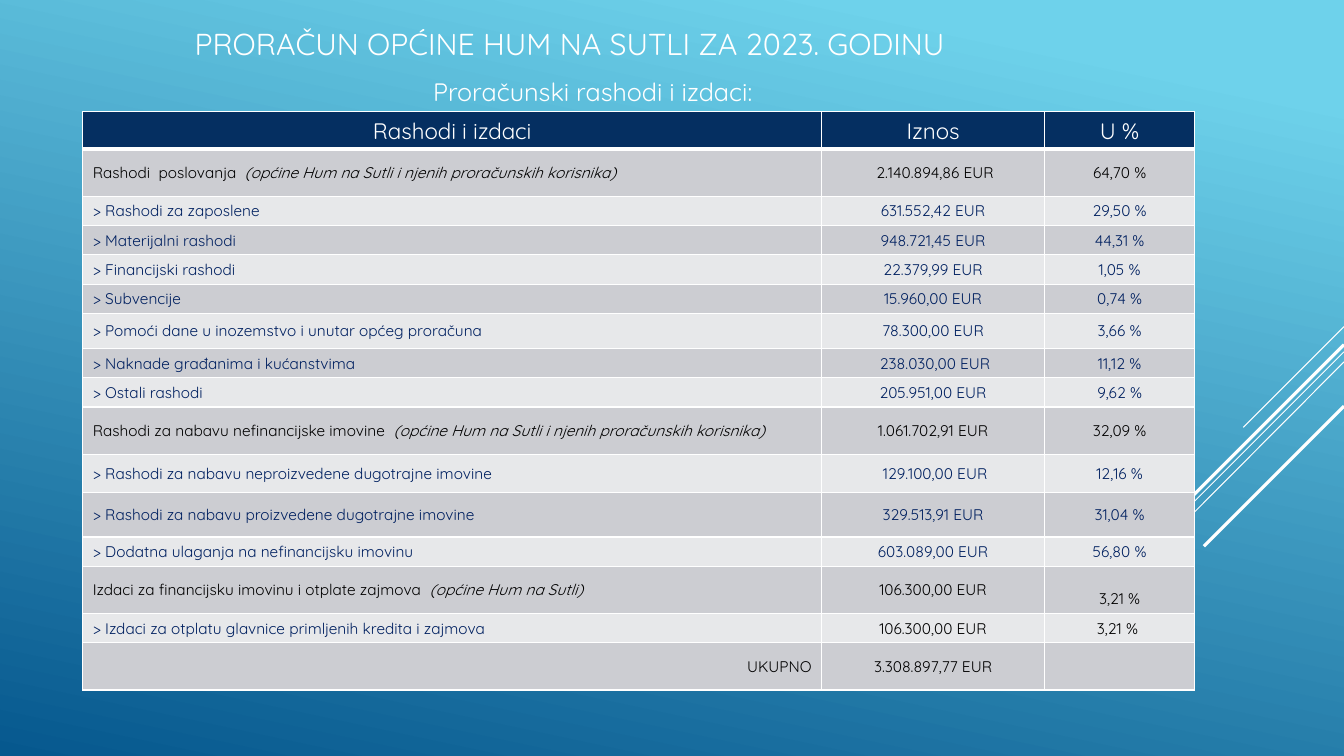
from dataclasses import dataclass

from lxml import etree
from pptx import Presentation
from pptx.dml.color import RGBColor
from pptx.enum.shapes import MSO_CONNECTOR
from pptx.enum.text import MSO_ANCHOR, PP_ALIGN
from pptx.oxml.ns import qn
from pptx.util import Inches, Pt

LEFT, MID, RIGHT = PP_ALIGN.LEFT, PP_ALIGN.CENTER, PP_ALIGN.RIGHT
CENTER, BASE = MSO_ANCHOR.MIDDLE, MSO_ANCHOR.BOTTOM
STRAIGHT = MSO_CONNECTOR.STRAIGHT


@dataclass(frozen=True)
class Theme:
    font: str = "Quicksand"
    white: str = "FFFFFF"
    black: str = "000000"
    navy: str = "002060"
    head: str = "052F61"
    dark: str = "CCCDD2"
    light: str = "E7E8EA"
    sky: str = "6ED2EB"
    deep: str = "06588E"
    title: float = 21.6
    sub: float = 18
    top: float = 16
    body: float = 11


THEME = Theme()

# Start x, start y, end x, end y, width in points
RAYS = [
    (13.33, 3.24, 12.33, 4.24, 0.75),
    (13.33, 3.49, 10.07, 6.75, 0.75),
    (13.33, 3.59, 11.26, 5.67, 0.75),
    (13.33, 3.42, 11.42, 5.33, 2.25),
    (13.33, 4.03, 11.94, 5.42, 2.25),
]

COLS = [7.33, 2.21, 1.49]
HEADS = ["Rashodi i izdaci", "Iznos", "U %"]
ALL = "(općine Hum na Sutli i njenih proračunskih korisnika)"

# Row height, label, italic note, amount, share
ROWS = [
    (0.47, "Rashodi  poslovanja  ", ALL, " 2.140.894,86 EUR", "64,70 %"),
    (0.29, "> Rashodi za zaposlene", "", "631.552,42 EUR", "29,50 %"),
    (0.29, "> Materijalni rashodi", "", "948.721,45 EUR", "44,31 %"),
    (0.29, "> Financijski rashodi", "", "22.379,99 EUR", "1,05 %"),
    (0.29, "> Subvencije", "", "15.960,00 EUR", "0,74 %"),
    (0.35, "> Pomoći dane u inozemstvo i unutar općeg proračuna", "",
     "78.300,00 EUR", "3,66 %"),
    (0.29, "> Naknade građanima i kućanstvima", "", " 238.030,00 EUR", "11,12 %"),
    (0.29, "> Ostali rashodi", "", "205.951,00 EUR", "9,62 %"),
    (0.47, "Rashodi za nabavu nefinancijske imovine  ", ALL,
     "1.061.702,91 EUR", "32,09 %"),
    (0.38, "> Rashodi za nabavu neproizvedene dugotrajne imovine", "",
     " 129.100,00 EUR", "12,16 %"),
    (0.44, "> Rashodi za nabavu proizvedene dugotrajne imovine", "",
     "329.513,91 EUR", "31,04 %"),
    (0.29, "> Dodatna ulaganja na nefinancijsku imovinu", "",
     "603.089,00 EUR", "56,80 %"),
    (0.47, "Izdaci za financijsku imovinu i otplate zajmova  ",
     "(općine Hum na Sutli) ", "106.300,00 EUR", "3,21 %"),
    (0.29, "> Izdaci za otplatu glavnice primljenih kredita i zajmova", "",
     "106.300,00 EUR", "3,21 % "),
    (0.47, "UKUPNO", "", "3.308.897,77 EUR", ""),
]
LOAN = 13  # first row of the loan part, whose figures are all black


def rgb(code):
    return RGBColor.from_string(code)


def write(frame, text, note="", size=THEME.body, color=THEME.black,
          align=LEFT, anchor=CENTER):
    """Write one paragraph, with an optional italic note at its end."""
    frame.word_wrap = True
    frame.vertical_anchor = anchor
    para = frame.paragraphs[0]
    para.alignment = align
    for part, slant in ((text, False), (note, True)):
        if part:
            run = para.add_run()
            run.text = part
            font = run.font
            font.name, font.size = THEME.font, Pt(size)
            font.bold, font.italic = False, slant
            font.color.rgb = rgb(color)


def add_text(slide, box, text, **style):
    shape = slide.shapes.add_textbox(*map(Inches, box))
    write(shape.text_frame, text, **style)


def add_ray(slide, x1, y1, x2, y2, width):
    ray = slide.shapes.add_connector(STRAIGHT, *map(Inches, (x1, y1, x2, y2)))
    ray.line.color.rgb = rgb(THEME.white)
    ray.line.width = Pt(width)
    etree.SubElement(ray._element.spPr, qn("a:effectLst"))


def edge(cell, tag, width):
    line = etree.SubElement(cell._tc.get_or_add_tcPr(), qn("a:" + tag),
                            w=str(Pt(width)))
    fill = etree.SubElement(line, qn("a:solidFill"))
    etree.SubElement(fill, qn("a:srgbClr"), val=THEME.white)


def paint(cell, fill, base=1):
    """Set the borders, then the fill, of a cell."""
    for tag, width in (("lnL", 1), ("lnR", 1), ("lnT", 1), ("lnB", base)):
        edge(cell, tag, width)
    cell.fill.solid()
    cell.fill.fore_color.rgb = rgb(fill)


def fill_row(table, i, label, note, amount, share):
    ink = THEME.navy if label.startswith(">") else THEME.black
    sums = THEME.black if i >= LOAN else ink
    side = RIGHT if i == len(ROWS) else LEFT
    drop = BASE if i == LOAN else CENTER
    cells = [table.cell(i, j) for j in range(len(COLS))]
    for cell in cells:
        paint(cell, THEME.dark if i % 2 else THEME.light)
        # The row under the header shares its heavy line
        if i == 1:
            cell._tc.tcPr.find(qn("a:lnT")).set("w", str(Pt(3)))
    write(cells[0].text_frame, label, note=note, color=ink, align=side)
    write(cells[1].text_frame, amount, color=sums, align=MID)
    write(cells[2].text_frame, share, color=sums, align=MID)
    for cell, anchor in zip(cells, (CENTER, CENTER, drop)):
        cell.vertical_anchor = anchor


def add_costs(slide):
    highs = [0.37] + [row[0] for row in ROWS]
    box = (0.82, 1.11, sum(COLS), sum(highs))
    table = slide.shapes.add_table(len(highs), len(COLS),
                                   *map(Inches, box)).table
    for col, width in zip(table.columns, COLS):
        col.width = Inches(width)
    for row, high in zip(table.rows, highs):
        row.height = Inches(high)
    for j, text in enumerate(HEADS):
        cell = table.cell(0, j)
        paint(cell, THEME.head, base=3)
        write(cell.text_frame, text, size=THEME.top, color=THEME.white,
              align=MID)
    for i, row in enumerate(ROWS, 1):
        fill_row(table, i, *row[1:])


def set_back(slide):
    fill = slide.background.fill
    fill.gradient()
    fill.gradient_angle = 258
    stops = zip(fill.gradient_stops, (THEME.sky, THEME.deep), (0.1, 1))
    for stop, color, place in stops:
        stop.color.rgb = rgb(color)
        stop.position = place


def main():
    deck = Presentation()
    deck.slide_width, deck.slide_height = Inches(13.33), Inches(7.5)
    slide = deck.slides.add_slide(deck.slide_layouts[6])

    # Backdrop
    set_back(slide)
    for ray in RAYS:
        add_ray(slide, *ray)

    # Headings
    add_text(slide, (1.01, 0.17, 9.28, 0.53),
             "PRORAČUN OPĆINE HUM NA SUTLI ZA 2023. GODINU",
             size=THEME.title, color=THEME.white, align=MID)
    add_text(slide, (2.47, 0.48, 5.09, 0.63), "Proračunski rashodi i izdaci:",
             size=THEME.sub, color=THEME.white, align=RIGHT, anchor=BASE)

    # Table of costs
    add_costs(slide)
    deck.save("out.pptx")


if __name__ == "__main__":
    main()
